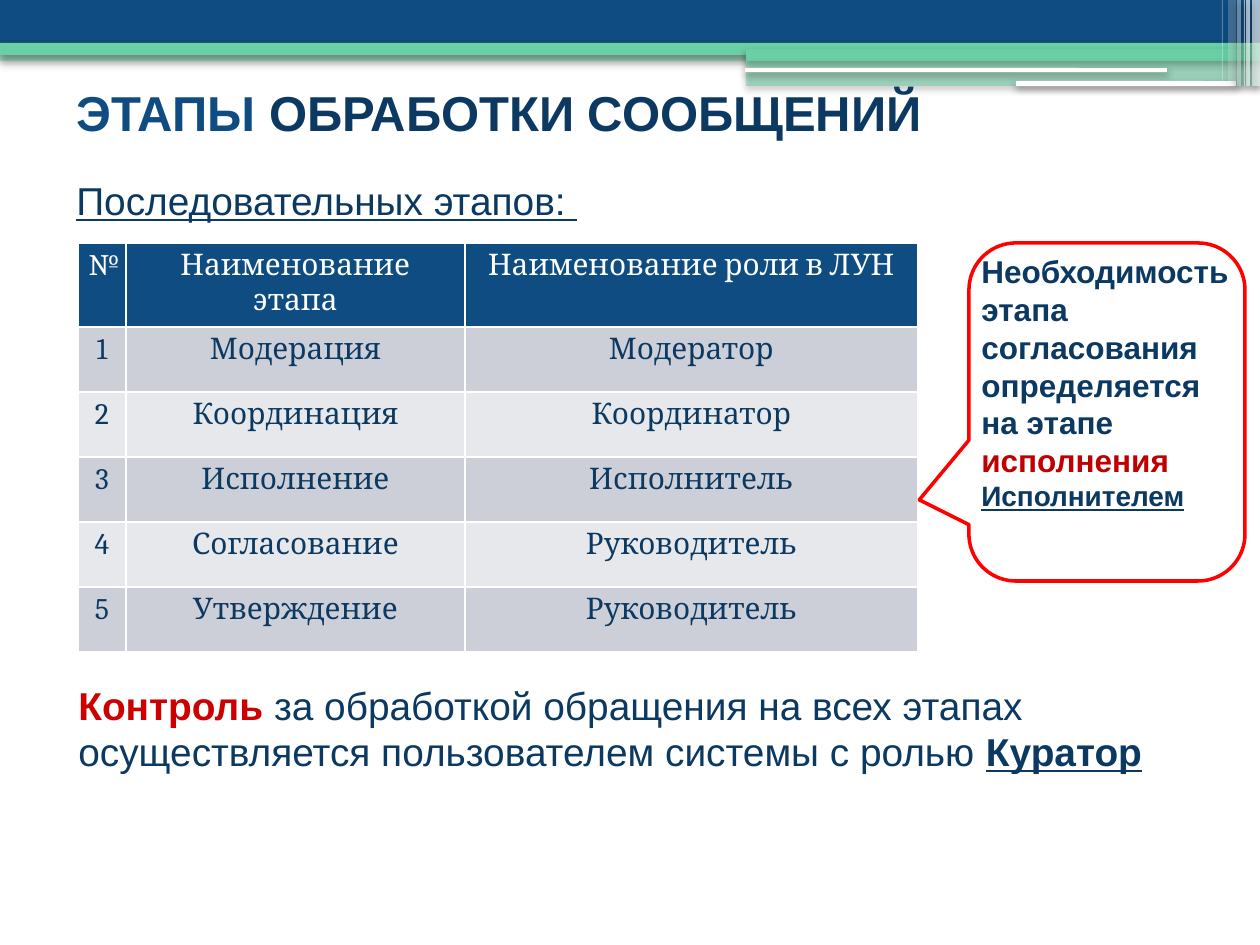
from dataclasses import dataclass

from lxml.etree import SubElement
from pptx import Presentation
from pptx.dml.color import RGBColor
from pptx.enum.shapes import MSO_SHAPE
from pptx.enum.text import MSO_AUTO_SIZE, PP_ALIGN
from pptx.oxml import parse_xml
from pptx.oxml.ns import nsdecls, qn
from pptx.util import Emu, Pt

NAVY = RGBColor(0x0F, 0x4C, 0x81)
INK = RGBColor(0x0B, 0x39, 0x61)
MINT = RGBColor(0x69, 0xD0, 0xA5)
WHITE = RGBColor(0xFF, 0xFF, 0xFF)
RED = RGBColor(0xFF, 0x00, 0x00)
CONTROL_RED = RGBColor(0xCC, 0x00, 0x00)
STAGE_RED = RGBColor(0xC0, 0x00, 0x00)
BAND_DARK = RGBColor(0xCC, 0xCF, 0xD8)
BAND_LIGHT = RGBColor(0xE7, 0xE8, 0xEC)

PX_PER_INCH = 126


def px(length: int) -> Emu:
    return Emu(round(length * 914400 / PX_PER_INCH))


@dataclass
class Box:
    left: int
    top: int
    width: int
    height: int

    def emu(self) -> list[Emu]:
        return [px(side) for side in (self.left, self.top, self.width, self.height)]


@dataclass
class Bar:
    box: Box
    color: RGBColor
    opacity: int = 100
    kind: MSO_SHAPE = MSO_SHAPE.RECTANGLE


@dataclass
class Span:
    text: str
    size: float
    color: RGBColor = INK
    bold: bool = False
    underline: bool = False
    face: str = "Arial"


@dataclass
class TextBlock:
    box: Box
    spans: list[Span]


# Header decoration, back to front
BARS = [
    Bar(Box(0, 50, 1260, 11), MINT, 50),
    Bar(Box(0, 0, 1260, 43), NAVY),
    Bar(Box(0, 43, 1260, 12), MINT),
    Bar(Box(746, 49, 514, 12), MINT),
    Bar(Box(746, 61, 514, 25), MINT, 50),
    Bar(Box(745, 68, 422, 4), WHITE, kind=MSO_SHAPE.ROUNDED_RECTANGLE),
    Bar(Box(1016, 81, 220, 5), WHITE, kind=MSO_SHAPE.ROUNDED_RECTANGLE),
    Bar(Box(1252, 0, 8, 86), WHITE, 65),
    Bar(Box(1246, 0, 4, 86), WHITE, 65),
    Bar(Box(1244, 0, 1, 86), WHITE, 60),
    Bar(Box(1237, 0, 4, 86), WHITE, 40),
    Bar(Box(1228, 0, 8, 81), WHITE, 20),
    Bar(Box(1222, 0, 1, 81), WHITE, 30),
]

HEADINGS = [
    TextBlock(Box(64, 76, 1108, 71), [
        Span("ЭТАПЫ ", 28, NAVY, bold=True),
        Span("ОБРАБОТКИ СООБЩЕНИЙ", 28, bold=True),
    ]),
    TextBlock(Box(64, 171, 1056, 59), [
        Span("Последовательных этапов: ", 22.2, underline=True),
    ]),
]
NOTES = [
    TextBlock(Box(66, 675, 1095, 106), [
        Span("Контроль", 22.2, CONTROL_RED, bold=True),
        Span(" за обработкой обращения на всех этапах осуществляется "
             "пользователем системы с ролью ", 22.2),
        Span("Куратор", 22.2, bold=True, underline=True),
    ]),
    TextBlock(Box(969, 246, 276, 272), [
        Span("Необходимость этапа согласования определяется на этапе ", 18, bold=True),
        Span("исполнения ", 18, STAGE_RED, bold=True),
        Span("Исполнителем", 16, bold=True, underline=True),
    ]),
]

STAGES = [
    ("№", "Наименование этапа", "Наименование роли в ЛУН"),
    ("1", "Модерация", "Модератор"),
    ("2", "Координация", "Координатор"),
    ("3", "Исполнение", "Исполнитель"),
    ("4", "Согласование", "Руководитель"),
    ("5", "Утверждение", "Руководитель"),
]
COLUMN_WIDTHS = [48, 339, 453]
ROW_HEIGHTS = [84] + [65] * 5


def add_span(para, span: Span) -> None:
    run = para.add_run()
    run.text = span.text
    formats = {"name": span.face, "size": Pt(span.size),
               "bold": span.bold, "underline": span.underline}
    for name, value in formats.items():
        setattr(run.font, name, value)
    run.font.color.rgb = span.color


def add_text(page, block: TextBlock) -> None:
    frame = page.shapes.add_textbox(*block.box.emu()).text_frame
    frame.word_wrap = True
    frame.auto_size = MSO_AUTO_SIZE.SHAPE_TO_FIT_TEXT
    for span in block.spans:
        add_span(frame.paragraphs[0], span)


def add_bar(page, bar: Bar) -> None:
    shape = page.shapes.add_shape(bar.kind, *bar.box.emu())
    shape.fill.solid()
    shape.fill.fore_color.rgb = bar.color
    shape.line.fill.background()
    properties = shape._element.spPr
    if bar.opacity < 100:
        color = properties.find(f"{qn('a:solidFill')}/{qn('a:srgbClr')}")
        SubElement(color, qn("a:alpha"), val=str(bar.opacity * 1000))
    properties.append(parse_xml(
        f'<a:effectLst {nsdecls("a")}>'
        '<a:outerShdw blurRad="52070" dist="25400" dir="5400000" rotWithShape="0">'
        '<a:srgbClr val="000000"><a:alpha val="40000"/></a:srgbClr>'
        '</a:outerShdw></a:effectLst>'))


def add_borders(cell) -> None:
    for side in ("lnL", "lnR", "lnT", "lnB"):
        cell._tc.get_or_add_tcPr().append(parse_xml(
            f'<a:{side} {nsdecls("a")} w="12192"><a:solidFill>'
            f'<a:srgbClr val="{WHITE}"/></a:solidFill></a:{side}>'))


def fill_cell(cell, text: str, color: RGBColor, background: RGBColor) -> None:
    margins = {"margin_left": px(11), "margin_right": px(11),
               "margin_top": px(6), "margin_bottom": px(6)}
    for name, value in margins.items():
        setattr(cell, name, value)
    add_borders(cell)
    cell.fill.solid()
    cell.fill.fore_color.rgb = background
    para = cell.text_frame.paragraphs[0]
    para.alignment = PP_ALIGN.CENTER
    add_span(para, Span(text, 17, color, face="Cambria"))


def add_stage_table(page) -> None:
    box = Box(78, 243, sum(COLUMN_WIDTHS), sum(ROW_HEIGHTS))
    table = page.shapes.add_table(len(STAGES), len(COLUMN_WIDTHS), *box.emu()).table
    for column, width in zip(table.columns, COLUMN_WIDTHS):
        column.width = px(width)
    for index, (row, height) in enumerate(zip(table.rows, ROW_HEIGHTS)):
        row.height = px(height)
        band = BAND_DARK if index % 2 else BAND_LIGHT
        color, background = (INK, band) if index else (WHITE, NAVY)
        for cell, text in zip(row.cells, STAGES[index]):
            fill_cell(cell, text, color, background)


def add_callout(page, box: Box) -> None:
    callout = page.shapes.add_shape(MSO_SHAPE.ROUNDED_RECTANGULAR_CALLOUT, *box.emu())
    for index, value in enumerate((-0.68, 0.26, 0.17)):
        callout.adjustments[index] = value
    callout.shadow.inherit = False
    callout.fill.background()
    callout.line.color.rgb = RED
    callout.line.width = Pt(2)


def main() -> None:
    deck = Presentation()
    deck.slide_width, deck.slide_height = px(1260), px(945)
    page = deck.slides.add_slide(deck.slide_layouts[6])

    # Header
    for bar in BARS:
        add_bar(page, bar)
    for block in HEADINGS:
        add_text(page, block)

    # Stages, notes and the callout outline
    add_stage_table(page)
    for block in NOTES:
        add_text(page, block)
    add_callout(page, Box(969, 243, 276, 338))

    deck.save("out.pptx")


if __name__ == "__main__":
    main()
